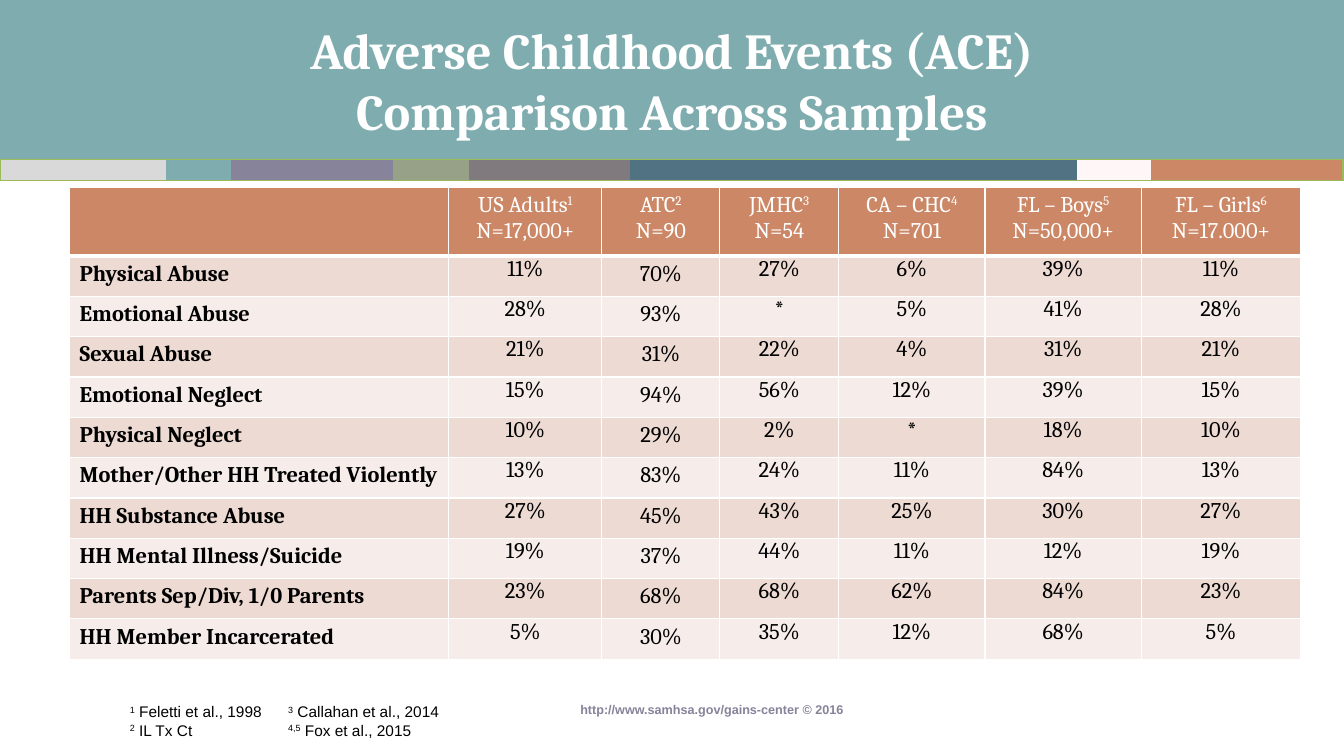
from lxml import etree
from pptx import Presentation
from pptx.dml.color import RGBColor
from pptx.enum.text import MSO_ANCHOR, PP_ALIGN
from pptx.oxml.ns import qn
from pptx.util import Inches, Pt

LEFT, CENTER = PP_ALIGN.LEFT, PP_ALIGN.CENTER
TOP, MIDDLE = MSO_ANCHOR.TOP, MSO_ANCHOR.MIDDLE
TITLE_ONLY = 5

WHITE, BLACK = "FFFFFF", "000000"
TEAL, PURPLE, ORANGE, GREEN = "7FADAF", "86839A", "CC8866", "9BBB59"
ROW_FILLS = ("ECDAD3", "F6EDEA")

TITLE_LINES = ("Adverse Childhood Events (ACE)", "Comparison Across Samples")
BAND = [
    (1.65, "D9D9D9"), (0.64, TEAL), (1.61, PURPLE), (0.75, "96A187"),
    (1.6, "80797E"), (4.43, "507282"), (0.74, "FFF7F7"), (1.9, ORANGE),
]
COLUMN_WIDTHS = (3.76, 1.52, 1.17, 1.18, 1.45, 1.55, 1.58)
SAMPLES = [
    ("US Adults", "N=17,000+"), ("ATC", "N=90"), ("JMHC", "N=54"),
    ("CA – CHC", "N=701"), ("FL – Boys", "N=50,000+"), ("FL – Girls", "N=17.000+"),
]
ATC_COLUMN = 2
EVENTS = [
    ("Physical Abuse", "11%", "70%", "27%", "6%", "39%", "11%"),
    ("Emotional Abuse", "28%", "93%", "*", "5%", "41%", "28%"),
    ("Sexual Abuse", "21%", "31%", "22%", "4%", "31%", "21%"),
    ("Emotional Neglect", "15%", "94%", "56%", "12%", "39%", "15%"),
    ("Physical Neglect", "10%", "29%", "2%", "*", "18%", "10%"),
    ("Mother/Other HH Treated Violently", "13%", "83%", "24%", "11%", "84%", "13%"),
    ("HH Substance Abuse", "27%", "45%", "43%", "25%", "30%", "27%"),
    ("HH Mental Illness/Suicide", "19%", "37%", "44%", "11%", "12%", "19%"),
    ("Parents Sep/Div, 1/0 Parents", "23%", "68%", "68%", "62%", "84%", "23%"),
    ("HH Member Incarcerated", "5%", "30%", "35%", "12%", "68%", "5%"),
]
FOOTNOTES = [
    (("1", " Feletti et al., 1998"), ("3", " Callahan et al., 2014")),
    (("2", " IL Tx Ct"), ("4,5", " Fox et al., 2015")),
]


def color(value):
    return RGBColor.from_string(value)


def add_run(paragraph, text, size, font, fill, bold=False, raised=False):
    run = paragraph.add_run()
    run.text = text
    run.font.size = Pt(size)
    run.font.name = font
    run.font.bold = bold
    run.font.color.rgb = color(fill)
    if raised:
        run._r.get_or_add_rPr().set("baseline", "30000")


def set_margins(target, horizontal, vertical):
    target.margin_left = target.margin_right = Inches(horizontal)
    target.margin_top = target.margin_bottom = Inches(vertical)


def fill_cell(cell, fill, borders):
    cell.fill.solid()
    cell.fill.fore_color.rgb = color(fill)
    properties = cell._tc.get_or_add_tcPr()
    for index, side in enumerate("LRTB"):
        line = etree.Element(qn(f"a:ln{side}"))
        if side in borders:
            line_color, width = borders[side]
            line.set("w", str(Pt(width)))
            solid = etree.SubElement(line, qn("a:solidFill"))
            etree.SubElement(solid, qn("a:srgbClr"), val=line_color)
        else:
            etree.SubElement(line, qn("a:noFill"))
        properties.insert(index, line)


def add_table(slide, left, top, widths, heights):
    frame = slide.shapes.add_table(
        len(heights), len(widths), Inches(left), Inches(top),
        Inches(sum(widths)), Inches(sum(heights)))
    table = frame.table
    table.first_row = table.horz_banding = False
    for column, width in zip(table.columns, widths):
        column.width = Inches(width)
    for row, height in zip(table.rows, heights):
        row.height = Inches(height)
    return table


def add_text_box(slide, left, top, width, height):
    box = slide.shapes.add_textbox(
        Inches(left), Inches(top), Inches(width), Inches(height))
    box.text_frame.word_wrap = True
    box.text_frame.vertical_anchor = TOP
    return box.text_frame


def add_title(slide):
    title = slide.shapes.title
    title.left, title.top = Inches(0), Inches(0)
    title.width, title.height = Inches(13.33), Inches(1.58)
    title.fill.solid()
    title.fill.fore_color.rgb = color(TEAL)
    title.text_frame.vertical_anchor = MIDDLE
    paragraph = title.text_frame.paragraphs[0]
    paragraph.alignment = CENTER
    for index, line in enumerate(TITLE_LINES):
        if index:
            paragraph.add_line_break()
        add_run(paragraph, line, 36, "Cambria", WHITE, bold=True)


def add_color_band(slide):
    table = add_table(slide, 0, 1.58, [width for width, _ in BAND], [0.21])
    edge = (GREEN, 1)
    for index, (_, fill) in enumerate(BAND):
        borders = {"T": edge, "B": edge}
        if index == 0:
            borders["L"] = edge
        if index == len(BAND) - 1:
            borders["R"] = edge
        cell = table.cell(0, index)
        set_margins(cell, 0, 0)
        fill_cell(cell, fill, borders)
        paragraph = cell.text_frame.paragraphs[0]
        etree.SubElement(paragraph._p, qn("a:endParaRPr"), sz="800")


def add_sample_header(cell, number, name, size):
    first = cell.text_frame.paragraphs[0]
    second = cell.text_frame.add_paragraph()
    first.alignment = second.alignment = CENTER
    add_run(first, name, 16, "Cambria", WHITE)
    add_run(first, str(number), 16, "Cambria", WHITE, raised=True)
    add_run(second, size, 16, "Cambria", WHITE)


def add_event_table(slide):
    heights = [0.68] + [0.4] * len(EVENTS)
    table = add_table(slide, 0.69, 1.86, COLUMN_WIDTHS, heights)
    borders = {side: (WHITE, 1) for side in "LRTB"}
    for column in range(len(COLUMN_WIDTHS)):
        fill_cell(table.cell(0, column), ORANGE, {**borders, "B": (WHITE, 3)})
    for number, (name, size) in enumerate(SAMPLES, 1):
        add_sample_header(table.cell(0, number), number, name, size)
    for row, values in enumerate(EVENTS, 1):
        for column, value in enumerate(values):
            cell = table.cell(row, column)
            fill_cell(cell, ROW_FILLS[(row - 1) % 2], borders)
            if column not in (0, ATC_COLUMN):
                set_margins(cell, 0.06, 0)
            paragraph = cell.text_frame.paragraphs[0]
            paragraph.alignment = CENTER if column else LEFT
            add_run(paragraph, value, 16, "Cambria", BLACK, bold=column == 0)


def add_footer(slide):
    frame = add_text_box(slide, 4.56, 6.92, 5, 0.4)
    set_margins(frame, 0.07, 0.04)
    paragraph = frame.paragraphs[0]
    paragraph.alignment = CENTER
    add_run(paragraph, "http://www.samhsa.gov/gains-center © 2016",
            9, "Arial", PURPLE, bold=True)


def add_footnotes(slide):
    frame = add_text_box(slide, 1.19, 6.92, 3.92, 0.47)
    for index, notes in enumerate(FOOTNOTES):
        paragraph = frame.add_paragraph() if index else frame.paragraphs[0]
        tabs = etree.SubElement(paragraph._p.get_or_add_pPr(), qn("a:tabLst"))
        etree.SubElement(tabs, qn("a:tab"), pos=str(Inches(1.57)), algn="l")
        for position, (mark, source) in enumerate(notes):
            if position:
                add_run(paragraph, "\t", 11, "Arial", BLACK)
            add_run(paragraph, mark, 11, "Arial", BLACK, raised=True)
            add_run(paragraph, source, 11, "Arial", BLACK)


def main():
    presentation = Presentation()
    presentation.slide_width = Inches(13.33)
    presentation.slide_height = Inches(7.5)
    slide = presentation.slides.add_slide(presentation.slide_layouts[TITLE_ONLY])
    add_title(slide)
    add_color_band(slide)
    add_event_table(slide)
    add_footer(slide)
    add_footnotes(slide)
    presentation.save("out.pptx")


if __name__ == "__main__":
    main()
